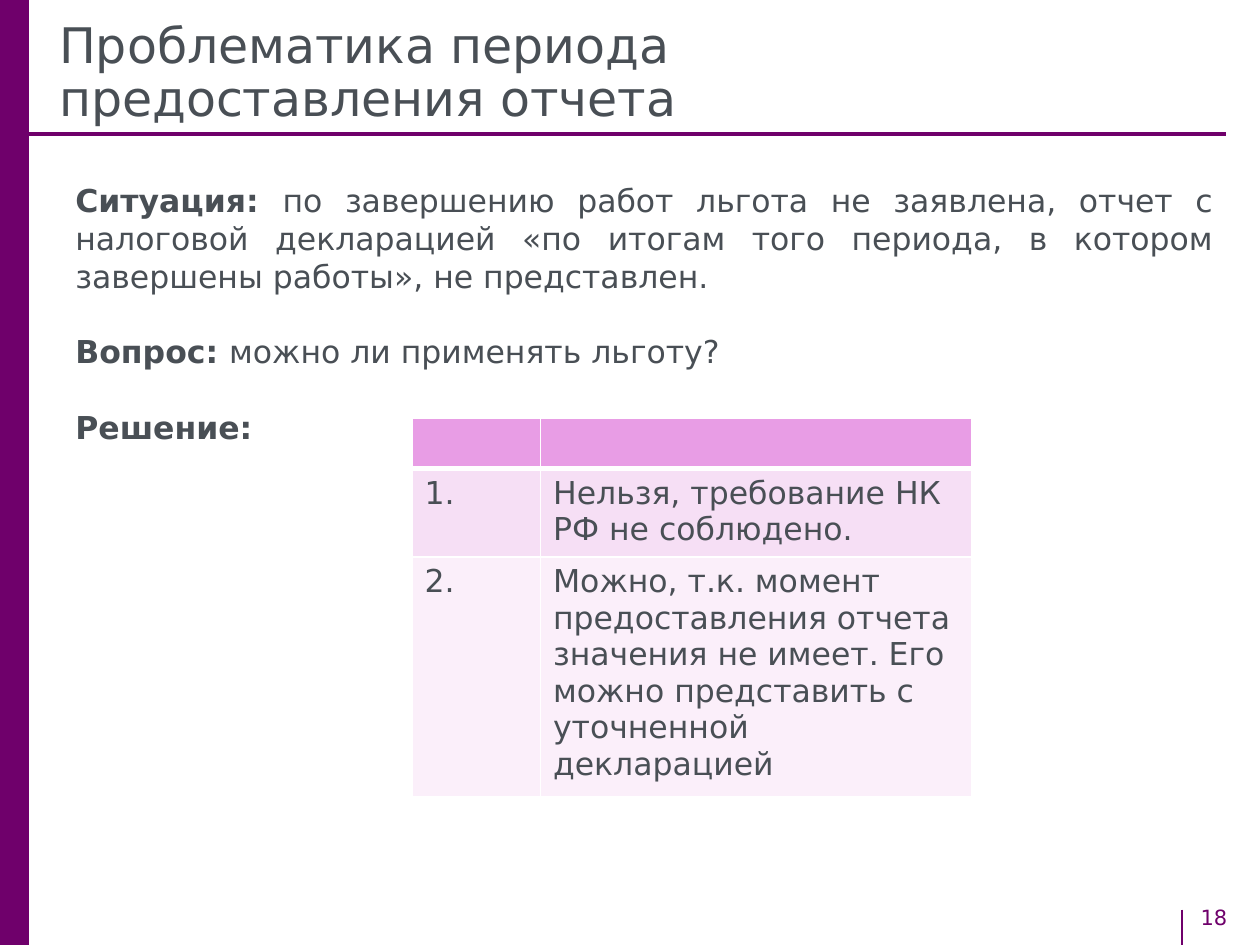
from lxml import etree
from pptx import Presentation
from pptx.dml.color import RGBColor
from pptx.enum.shapes import MSO_CONNECTOR, MSO_SHAPE
from pptx.enum.text import MSO_ANCHOR, MSO_AUTO_SIZE, PP_ALIGN
from pptx.oxml import parse_xml
from pptx.oxml.ns import nsdecls, qn
from pptx.util import Inches, Pt

FONT = "DejaVu Sans"
PLUM = RGBColor(0x6F, 0x00, 0x6B)
GREY = RGBColor(0x49, 0x4F, 0x55)
WHITE = RGBColor(0xFF, 0xFF, 0xFF)
FILLS = [
    RGBColor(0xE8, 0x9D, 0xE5),
    RGBColor(0xF6, 0xDF, 0xF5),
    RGBColor(0xFB, 0xEF, 0xFA),
]
STRAIGHT = MSO_CONNECTOR.STRAIGHT
RECT = MSO_SHAPE.RECTANGLE
MIDDLE = MSO_ANCHOR.MIDDLE
GROW = MSO_AUTO_SIZE.SHAPE_TO_FIT_TEXT
LEFT, JUSTIFY = PP_ALIGN.LEFT, PP_ALIGN.JUSTIFY

TITLE = "Проблематика периода предоставления отчета"
BODY = [
    [
        ("Ситуация: ", True),
        (
            "по завершению работ льгота не заявлена, отчет с налоговой "
            "декларацией «по итогам того периода, в котором завершены "
            "работы», не представлен.",
            False,
        ),
    ],
    [("Вопрос: ", True), ("можно ли применять льготу?", False)],
    [("Решение:", True)],
]
ROWS = [
    ("", ""),
    ("1.", "Нельзя, требование НК РФ не соблюдено."),
    (
        "2.",
        "Можно, т.к. момент предоставления отчета значения не имеет. "
        "Его можно представить с уточненной декларацией",
    ),
]
COLS = [1.02, 3.42]
HEIGHTS = [0.39, 0.7, 1.9]


def write(frame, paras, size=18, color=GREY, align=LEFT, lead=None, gap=0):
    for i, runs in enumerate(paras):
        para = frame.paragraphs[0] if i == 0 else frame.add_paragraph()
        para.alignment = align
        if lead:
            para.line_spacing = lead
        if i:
            para.space_before = Pt(gap)
        para.font.size = Pt(size)
        for text, bold in runs:
            run = para.add_run()
            run.text = text
            run.font.name = FONT
            run.font.size = Pt(size)
            run.font.bold = bold
            run.font.color.rgb = color


def add_box(slide, x, y, w, h, wrap=True):
    box = slide.shapes.add_textbox(Inches(x), Inches(y), Inches(w), Inches(h))
    box.text_frame.word_wrap = wrap
    return box.text_frame


def add_bar(slide, x, y, w, h):
    bar = slide.shapes.add_shape(RECT, Inches(x), Inches(y), Inches(w), Inches(h))
    bar.shadow.inherit = False
    bar.fill.solid()
    bar.fill.fore_color.rgb = PLUM
    bar.line.fill.background()


def add_line(slide, x1, y1, x2, y2, width):
    line = slide.shapes.add_connector(
        STRAIGHT, Inches(x1), Inches(y1), Inches(x2), Inches(y2)
    )
    line.line.color.rgb = PLUM
    line.line.width = Pt(width)
    etree.SubElement(line._element.spPr, qn("a:effectLst"))


def add_edge(cell, side, width):
    props = cell._tc.get_or_add_tcPr()
    props.append(
        parse_xml(
            f'<a:ln{side} {nsdecls("a")} w="{Pt(width)}"><a:solidFill>'
            f'<a:srgbClr val="{WHITE}"/></a:solidFill></a:ln{side}>'
        )
    )


def add_grid(slide, x, y):
    table = slide.shapes.add_table(
        len(ROWS), len(COLS), Inches(x), Inches(y),
        Inches(sum(COLS)), Inches(sum(HEIGHTS)),
    ).table
    for col, width in zip(table.columns, COLS):
        col.width = Inches(width)
    for i, (row, height) in enumerate(zip(table.rows, HEIGHTS)):
        row.height = Inches(height)
        for cell, text in zip(row.cells, ROWS[i]):
            add_edge(cell, "L", 1)
            add_edge(cell, "R", 1)
            add_edge(cell, "T", 3 if i == 1 else 1)
            add_edge(cell, "B", 3 if i == 0 else 1)
            cell.fill.solid()
            cell.fill.fore_color.rgb = FILLS[i]
            write(cell.text_frame, [[(text, False)] if text else []])


def main():
    deck = Presentation()
    deck.slide_width, deck.slide_height = Inches(10), Inches(7.5)
    slide = deck.slides.add_slide(deck.slide_layouts[6])

    number = add_box(slide, 9.43, 7.13, 0.49, 0.3, wrap=False)
    number.auto_size = GROW
    write(number, [[("18", False)]], size=12, color=PLUM)
    add_line(slide, 9.38, 7.22, 9.38, 7.5, 1)
    add_bar(slide, -0.02, 0, 0.25, 7.5)
    add_line(slide, 0.21, 1.06, 9.73, 1.06, 2.25)

    title = add_box(slide, 0.47, 0.19, 8.15, 0.8)
    title.margin_left = title.margin_right = 0
    title.margin_top = title.margin_bottom = 0
    title.vertical_anchor = MIDDLE
    write(title, [[(TITLE, False)]], size=28, lead=0.9)

    body = add_box(slide, 0.5, 1.39, 9.23, 3.43)
    write(body, BODY, align=JUSTIFY, gap=21.5)
    add_grid(slide, 3.27, 3.32)
    deck.save("out.pptx")


if __name__ == "__main__":
    main()
